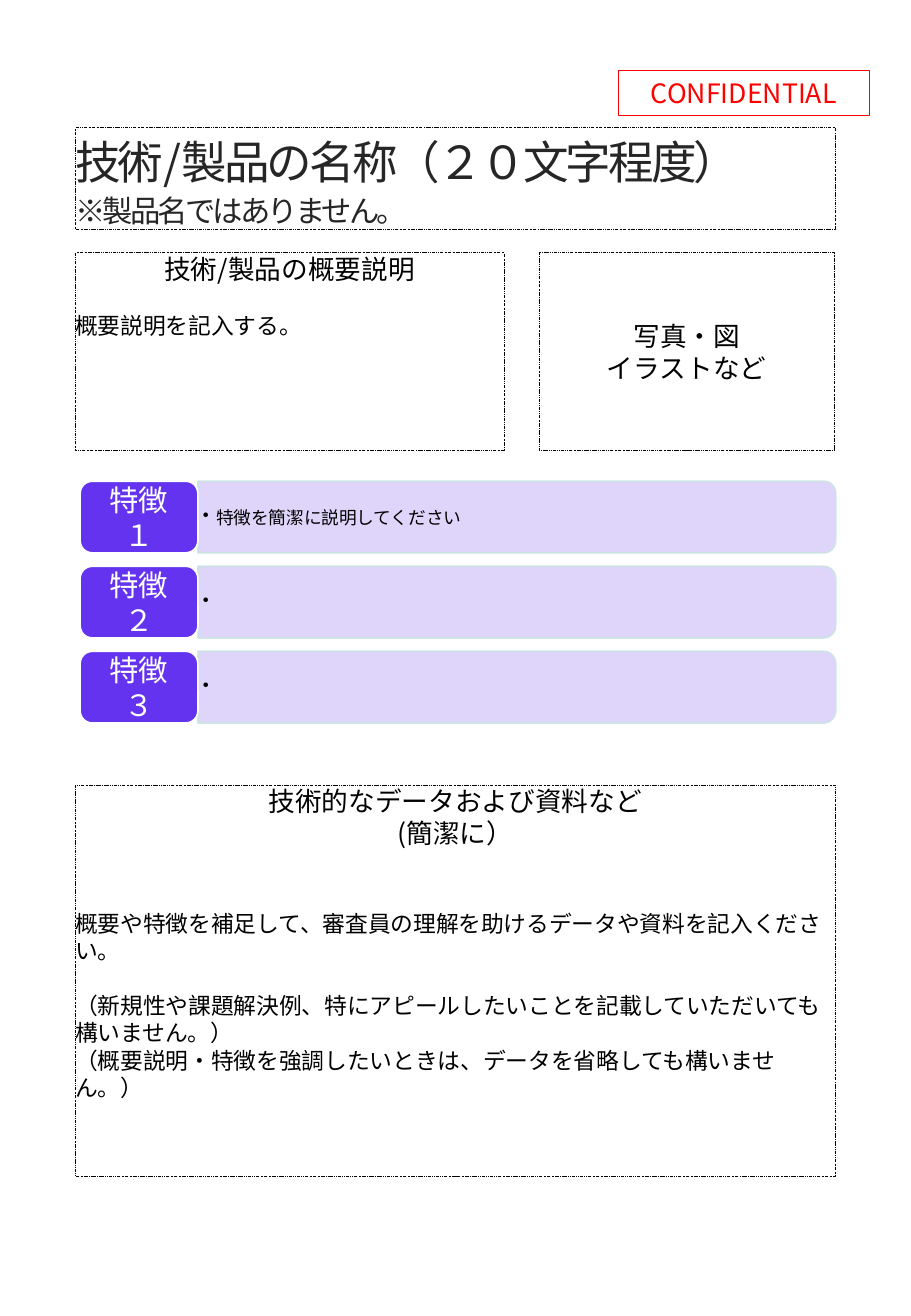
from dataclasses import dataclass
from math import cos, pi, sin

from lxml.etree import SubElement
from pptx import Presentation
from pptx.dml.color import RGBColor
from pptx.enum.dml import MSO_LINE
from pptx.enum.shapes import MSO_SHAPE
from pptx.enum.text import MSO_ANCHOR, MSO_AUTO_SIZE, PP_ALIGN
from pptx.oxml.ns import qn
from pptx.util import Inches, Pt


@dataclass(frozen=True)
class Theme:
    font: str = "Noto Sans CJK JP"
    caption_font: str = "Roboto"
    black: str = "000000"
    title_ink: str = "262626"
    white: str = "FFFFFF"
    red: str = "FF0000"
    violet: str = "6433EF"
    lavender: str = "DCD1FB"
    mint: str = "CCE4E3"
    title: float = 27
    note: float = 18
    tag: float = 17.4
    heading: float = 15.8
    body: float = 13.5
    feature: float = 10.5
    leading: float = 1.2


THEME = Theme()
CORNER = 0.1


def place(shape, box):
    shape.left, shape.top, shape.width, shape.height = map(Inches, box)


def set_alpha(shape, percent):
    for color in shape.element.spPr.iter(qn("a:srgbClr")):
        SubElement(color, qn("a:alpha")).set("val", str(percent * 1000))


def style_shape(shape, line, fill=None, width=0.25, dash=None):
    if not shape.is_placeholder:
        shape.shadow.inherit = False
    if fill:
        shape.fill.solid()
        shape.fill.fore_color.rgb = RGBColor.from_string(fill)
    else:
        shape.fill.background()
    shape.line.color.rgb = RGBColor.from_string(line)
    shape.line.width = Pt(width)
    if dash:
        shape.line.dash_style = dash


def set_frame(shape, anchor=MSO_ANCHOR.MIDDLE, insets=(0, 0, 0, 0)):
    frame = shape.text_frame
    frame.word_wrap = True
    frame.auto_size = MSO_AUTO_SIZE.NONE
    frame.vertical_anchor = anchor
    (frame.margin_left, frame.margin_top,
     frame.margin_right, frame.margin_bottom) = map(Inches, insets)


def write(shape, text, size, color=THEME.black, font=THEME.font,
          align=PP_ALIGN.LEFT, before=0, spacing=None, bullet=False):
    frame = shape.text_frame
    paragraph = frame.paragraphs[0]
    if paragraph.runs:
        paragraph = frame.add_paragraph()
    paragraph.alignment = align
    paragraph.line_spacing = Pt(size * THEME.leading)
    paragraph.space_before = Pt(before)
    properties = paragraph._p.get_or_add_pPr()
    indent = Inches(0.11) if bullet else 0
    properties.set("marL", str(indent))
    properties.set("indent", str(-indent))
    if bullet:
        SubElement(properties, qn("a:buChar")).set("char", "•")
    else:
        SubElement(properties, qn("a:buNone"))
    run = paragraph.add_run()
    run.text = text
    run.font.size = Pt(size)
    run.font.color.rgb = RGBColor.from_string(color)
    run.font.name = font
    run_properties = run._r.get_or_add_rPr()
    SubElement(run_properties, qn("a:ea")).set("typeface", font)
    if spacing:
        run_properties.set("spc", str(round(spacing * 100)))


def add_rectangle(slide, box):
    return slide.shapes.add_shape(MSO_SHAPE.RECTANGLE, *map(Inches, box))


def style_dashed(shape, fill=None):
    style_shape(shape, THEME.black, fill, dash=MSO_LINE.DASH_DOT_DOT)


def add_confidential(slide, box):
    stamp = add_rectangle(slide, box)
    style_shape(stamp, THEME.red, width=0.75)
    set_frame(stamp)
    write(stamp, "CONFIDENTIAL", THEME.heading, THEME.red, align=PP_ALIGN.CENTER)


def fill_title(slide, box):
    title = slide.shapes.title
    place(title, box)
    style_dashed(title)
    set_frame(title, insets=(0, 0.04, 0, 0))
    write(title, "技術/製品の名称（２０文字程度）", THEME.title, THEME.title_ink, spacing=-1.7)
    write(title, "※製品名ではありません。", THEME.note, THEME.title_ink,
          before=2, spacing=-1.7)


def add_overview(slide, box):
    overview = add_rectangle(slide, box)
    style_dashed(overview)
    set_frame(overview, MSO_ANCHOR.TOP)
    write(overview, "技術/製品の概要説明", THEME.heading, align=PP_ALIGN.CENTER)
    write(overview, "概要説明を記入する。", THEME.body, before=16)


def add_illustration(slide, box):
    illustration = add_rectangle(slide, box)
    style_dashed(illustration, THEME.white)
    set_frame(illustration)
    for text in ("写真・図", "イラストなど"):
        write(illustration, text, THEME.heading, font=THEME.caption_font,
              align=PP_ALIGN.CENTER)


def add_panel(slide, box):
    left, top, width, height = box
    right, bottom = left + width, top + height
    steps = 8
    points = [(left, top)]
    for center_y, start in ((top + CORNER, -pi / 2), (bottom - CORNER, 0)):
        for step in range(steps + 1):
            angle = start + pi / 2 * step / steps
            points.append((right - CORNER + CORNER * cos(angle),
                           center_y + CORNER * sin(angle)))
    points.append((left, bottom))
    corners = [(Inches(x), Inches(y)) for x, y in points]
    builder = slide.shapes.build_freeform(*corners[0])
    builder.add_line_segments(corners[1:], close=True)
    return builder.convert_to_shape()


def add_feature(slide, box, label, text):
    left, top, width, height = box
    tag_width = 0.97
    panel = add_panel(slide, (left + tag_width, top, width - tag_width, height))
    style_shape(panel, THEME.mint, THEME.lavender, width=1)
    set_alpha(panel, 90)
    set_frame(panel, insets=(0.04, 0.04, 0.07, 0.04))
    write(panel, text, THEME.feature, bullet=True)
    tag = slide.shapes.add_shape(MSO_SHAPE.ROUNDED_RECTANGLE,
                                 *map(Inches, (left, top, tag_width, height)))
    tag.adjustments[0] = CORNER / height
    style_shape(tag, THEME.white, THEME.violet, width=1)
    set_frame(tag, insets=(0.1, 0.07, 0.1, 0.07))
    write(tag, label, THEME.tag, THEME.white, align=PP_ALIGN.CENTER)


def add_features(slide, box):
    left, top, width, height = box
    features = (("特徴１", "特徴を簡潔に説明してください"), ("特徴２", " "), ("特徴３", " "))
    row_height = 0.59
    pitch = (height - row_height) / (len(features) - 1)
    for index, (label, text) in enumerate(features):
        add_feature(slide, (left, top + index * pitch, width, row_height), label, text)


def fill_data(slide, box):
    data = slide.placeholders[1]
    place(data, box)
    style_dashed(data)
    set_frame(data, MSO_ANCHOR.TOP)
    for text in ("技術的なデータおよび資料など", "(簡潔に）"):
        write(data, text, THEME.heading, align=PP_ALIGN.CENTER)
    for text, before in (
        ("概要や特徴を補足して、審査員の理解を助けるデータや資料を記入ください。", 36),
        ("（新規性や課題解決例、特にアピールしたいことを記載していただいても構いません。）", 16),
        ("（概要説明・特徴を強調したいときは、データを省略しても構いません。）", 0),
    ):
        write(data, text, THEME.body, before=before)


def main():
    presentation = Presentation()
    presentation.slide_width = Inches(7.5)
    presentation.slide_height = Inches(10.83)
    slide = presentation.slides.add_slide(presentation.slide_layouts[1])
    fill_data(slide, (0.62, 6.46, 6.26, 3.22))
    add_features(slide, (0.66, 3.96, 6.22, 1.99))
    add_overview(slide, (0.62, 2.08, 3.53, 1.63))
    fill_title(slide, (0.62, 1.05, 6.26, 0.84))
    add_confidential(slide, (5.09, 0.58, 2.07, 0.37))
    add_illustration(slide, (4.44, 2.08, 2.43, 1.63))
    presentation.save("out.pptx")


if __name__ == "__main__":
    main()
